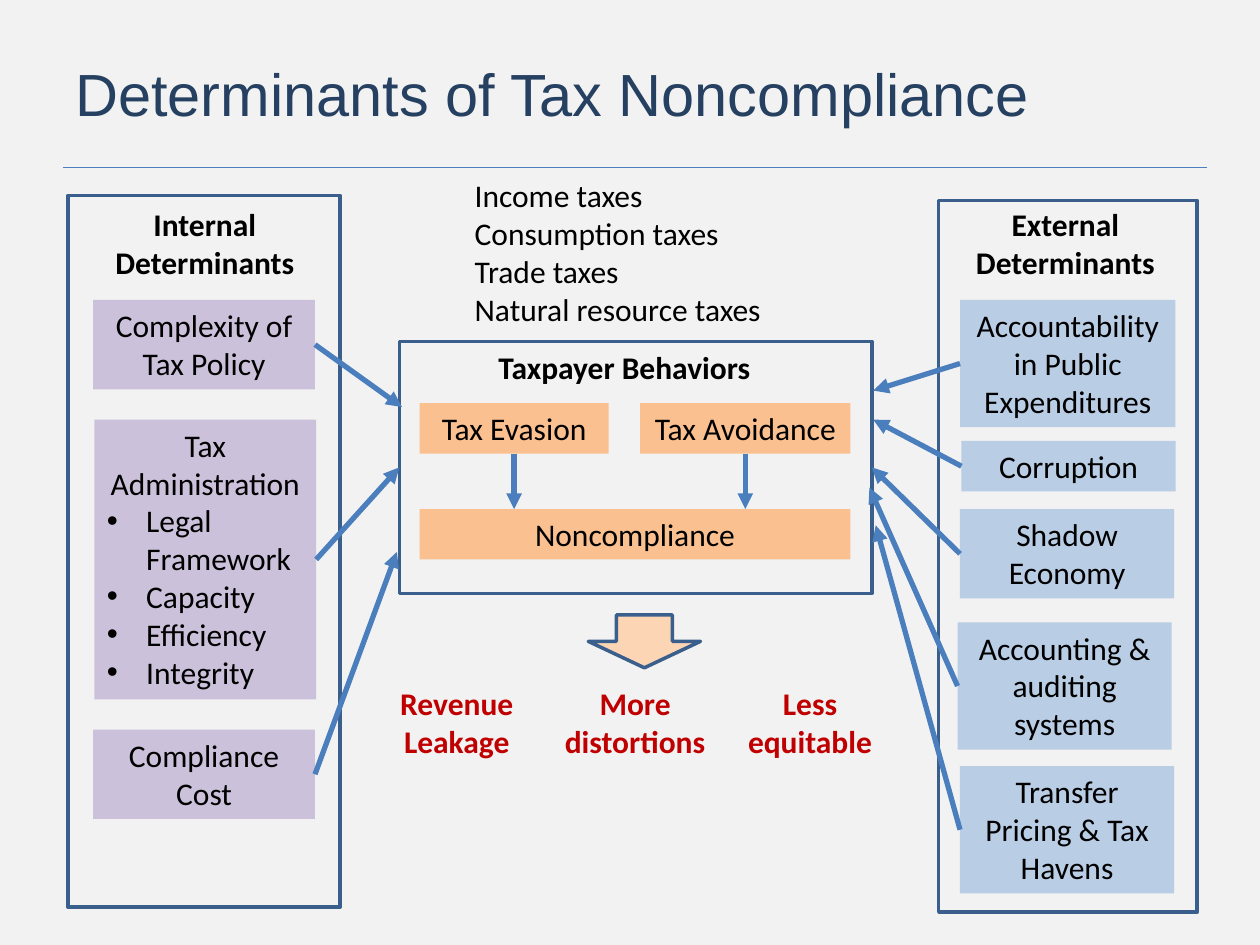
import pptx
import pptx.util
import pptx.dml.color
import pptx.enum.shapes
import pptx.enum.text
import pptx.oxml
import pptx.oxml.ns

Pt = pptx.util.Pt
SHAPES = pptx.enum.shapes.MSO_SHAPE
ALIGN = pptx.enum.text.PP_ALIGN
ANCHOR = pptx.enum.text.MSO_ANCHOR
LEFT, BOTTOM, RIGHT = 1, 2, 3
COLOURS = {
    "background": "F2F2F2", "title": "254061", "text": "000000", "outcome": "C00000",
    "connector": "4B7EBC", "frame": "3A5F8C", "arrow": "FCD5B5",
    "behavior": "FAC090", "internal": "CCC1DA", "external": "B9CDE5",
}


def colour(name):
    """Return the named colour."""
    return pptx.dml.color.RGBColor.from_string(COLOURS[name])


def add_xml(parent, tag, **attributes):
    """Append a drawing element to a parent element."""
    element = pptx.oxml.parse_xml(f"<a:{tag} {pptx.oxml.ns.nsdecls('a')}/>")
    for key, value in attributes.items():
        element.set(key, value)
    parent.append(element)


def place(box, left, top, width, height):
    """Return a rectangle in points, offset from the corner of a box."""
    return box[0] + left, box[1] + top, width, height


def write(shape, text, name="text", bold=False, align=ALIGN.CENTER, bulleted=False):
    """Write text into a shape, with bullets after the first paragraph if asked."""
    frame = shape.text_frame
    frame.text = text
    frame.word_wrap = True
    frame.auto_size = pptx.enum.text.MSO_AUTO_SIZE.SHAPE_TO_FIT_TEXT
    frame.vertical_anchor = ANCHOR.TOP
    for index, paragraph in enumerate(frame.paragraphs):
        paragraph.alignment = align
        paragraph.font.name = "Calibri"
        paragraph.font.size = Pt(18)
        paragraph.font.bold = bold
        paragraph.font.color.rgb = colour(name)
        if bulleted and index:
            paragraph.alignment = ALIGN.LEFT
            properties = paragraph._p.get_or_add_pPr()
            properties.set("marL", str(Pt(22.5)))
            properties.set("indent", str(-Pt(22.5)))
            bullet_font = pptx.oxml.parse_xml(
                f'<a:buFont {pptx.oxml.ns.nsdecls("a")} typeface="Arial"/>')
            properties.insert(0, bullet_font)
            bullet = pptx.oxml.parse_xml(
                f'<a:buChar {pptx.oxml.ns.nsdecls("a")} char="•"/>')
            bullet_font.addnext(bullet)


def add_label(slide, box, text, **style):
    """Add a text box."""
    write(slide.shapes.add_textbox(*map(Pt, box)), text, **style)


def add_box(slide, box, fill=None, outline=None, kind=SHAPES.RECTANGLE):
    """Add a preset shape with an optional fill and outline."""
    shape = slide.shapes.add_shape(kind, *map(Pt, box))
    shape.shadow.inherit = False
    if fill:
        shape.fill.solid()
        shape.fill.fore_color.rgb = colour(fill)
    else:
        shape.fill.background()
    if outline:
        shape.line.color.rgb = colour(outline)
        shape.line.width = Pt(2)
    else:
        shape.line.fill.background()
    return shape


def add_line(slide, start, end, width):
    """Add a straight line between two points."""
    line = slide.shapes.add_connector(
        pptx.enum.shapes.MSO_CONNECTOR.STRAIGHT, *map(Pt, (*start, *end)))
    line.line.color.rgb = colour("connector")
    line.line.width = Pt(width)
    add_xml(line._element.spPr, "effectLst")
    return line


def add_arrow(slide, source, side, end):
    """Add an arrow from the middle of a shape's side to a point."""
    arrow = add_line(slide, end, end, 3)
    arrow.begin_connect(source, side)
    add_xml(arrow.line._get_or_add_ln(), "tailEnd", type="triangle")
    return arrow


def add_title(slide, box):
    """Format the title and draw the rule under it."""
    title = slide.shapes.title
    title.left, title.top, title.width, title.height = map(Pt, box)
    title.text_frame.text = "Determinants of Tax Noncompliance"
    title.text_frame.vertical_anchor = ANCHOR.MIDDLE
    paragraph = title.text_frame.paragraphs[0]
    paragraph.alignment = ALIGN.LEFT
    paragraph.font.name = "Arial"
    paragraph.font.size = Pt(34)
    paragraph.font.color.rgb = colour("title")
    add_line(slide, (box[0], 95.8), (690, 95.8), 0.75)


def add_behaviors(slide, box):
    """Add the taxpayer behaviors panel and return its frame."""
    add_label(slide, place(box, 47.6, 0, 162, 28.8), "Taxpayer Behaviors", bold=True)
    result_top = 95.8
    for text, left, width in (("Tax Evasion", 11.6, 108), ("Tax Avoidance", 137.6, 120.2)):
        behavior = add_box(slide, place(box, left, 35.3, width, 28.8), "behavior")
        write(behavior, text)
        add_arrow(slide, behavior, BOTTOM,
                  (box[0] + left + width / 2, box[1] + result_top))
    result = add_box(slide, place(box, 11.6, result_top, 246.2, 28.8), "behavior")
    write(result, "Noncompliance")
    return add_box(slide, box, outline="frame")


def add_outcomes(slide, box):
    """Add the block arrow and the three outcomes below it."""
    add_box(slide, place(box, 120.2, 0, 64.1, 30.2), "arrow", "frame", SHAPES.DOWN_ARROW)
    for text, left, width in (("Revenue Leakage", 0, 90),
                              ("More distortions", 95.8, 102.2),
                              ("Less equitable", 195.8, 102.2)):
        add_label(slide, place(box, left, 36, width, 51.1), text, name="outcome", bold=True)


def add_determinants(slide, box, heading, heading_offset, fill, factors, side, target):
    """Add a column of factors, each with an arrow to a point or to the target's side."""
    add_box(slide, box, outline="frame")
    add_label(slide, place(box, *heading_offset, 162, 51.1), heading, bold=True)
    for text, area, end in factors:
        factor = add_box(slide, place(box, *area), fill)
        write(factor, text, bulleted=text.count("\n") > 1)
        arrow = add_arrow(slide, factor, side, end or (0, 0))
        if end is None:
            arrow.end_connect(target, LEFT if side == RIGHT else RIGHT)


def main():
    """Build and save the slide."""
    presentation = pptx.Presentation()
    presentation.slide_width, presentation.slide_height = Pt(720), Pt(540)
    slide = presentation.slides.add_slide(presentation.slide_layouts[5])
    slide.background.fill.solid()
    slide.background.fill.fore_color.rgb = colour("background")

    add_title(slide, (36, 21.6, 648, 62.6))
    behaviors = add_behaviors(slide, (228.2, 195.1, 270, 144))
    add_outcomes(slide, (216, 351.4, 298, 87.1))
    internal = (
        ("Complexity of Tax Policy", (14.4, 59.8, 126.7, 51.1), (229.7, 232.6)),
        ("Tax Administration\nLegal Framework\nCapacity\nEfficiency\nIntegrity",
         (15.1, 128.2, 126.7, 159.8), None),
        ("Compliance Cost", (14.4, 305.3, 126.7, 51.1), (226.8, 315.4)),
    )
    add_determinants(slide, (38.9, 111.6, 155.5, 406.8), "Internal Determinants",
                     (-2.9, 2.2), "internal", internal, RIGHT, behaviors)
    external = (
        ("Accountability in Public Expenditures", (12.2, 56.9, 123.1, 72.7), (499, 223.2)),
        ("Corruption", (13, 137.5, 122.4, 28.8), (499, 239.8)),
        ("Shadow\nEconomy", (12.2, 176.4, 122.4, 51.1), None),
        ("Accounting & auditing systems", (10.8, 241.2, 122.4, 72.7), (496.8, 278.6)),
        ("Transfer Pricing & Tax Havens", (12.2, 323.3, 122.4, 72.7), (500.4, 300.2)),
    )
    add_determinants(slide, (536.4, 114.5, 147.6, 406.8), "External Determinants",
                     (-8.6, -0.7), "external", external, LEFT, behaviors)
    add_label(slide, (264.2, 97.2, 203.8, 94.3),
              "Income taxes\vConsumption taxes\nTrade taxes\nNatural resource taxes",
              align=ALIGN.LEFT)
    presentation.save("out.pptx")


if __name__ == "__main__":
    main()
